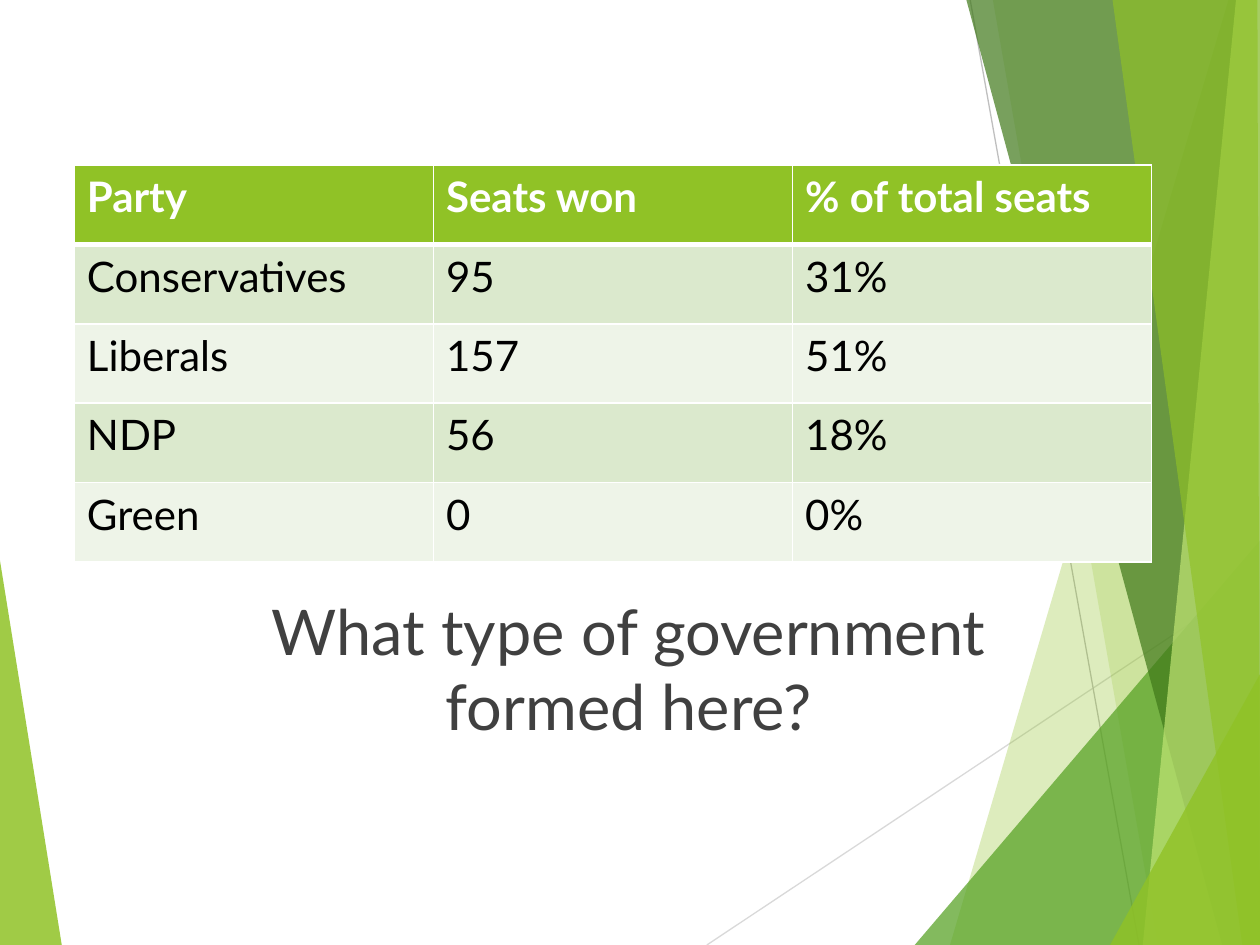
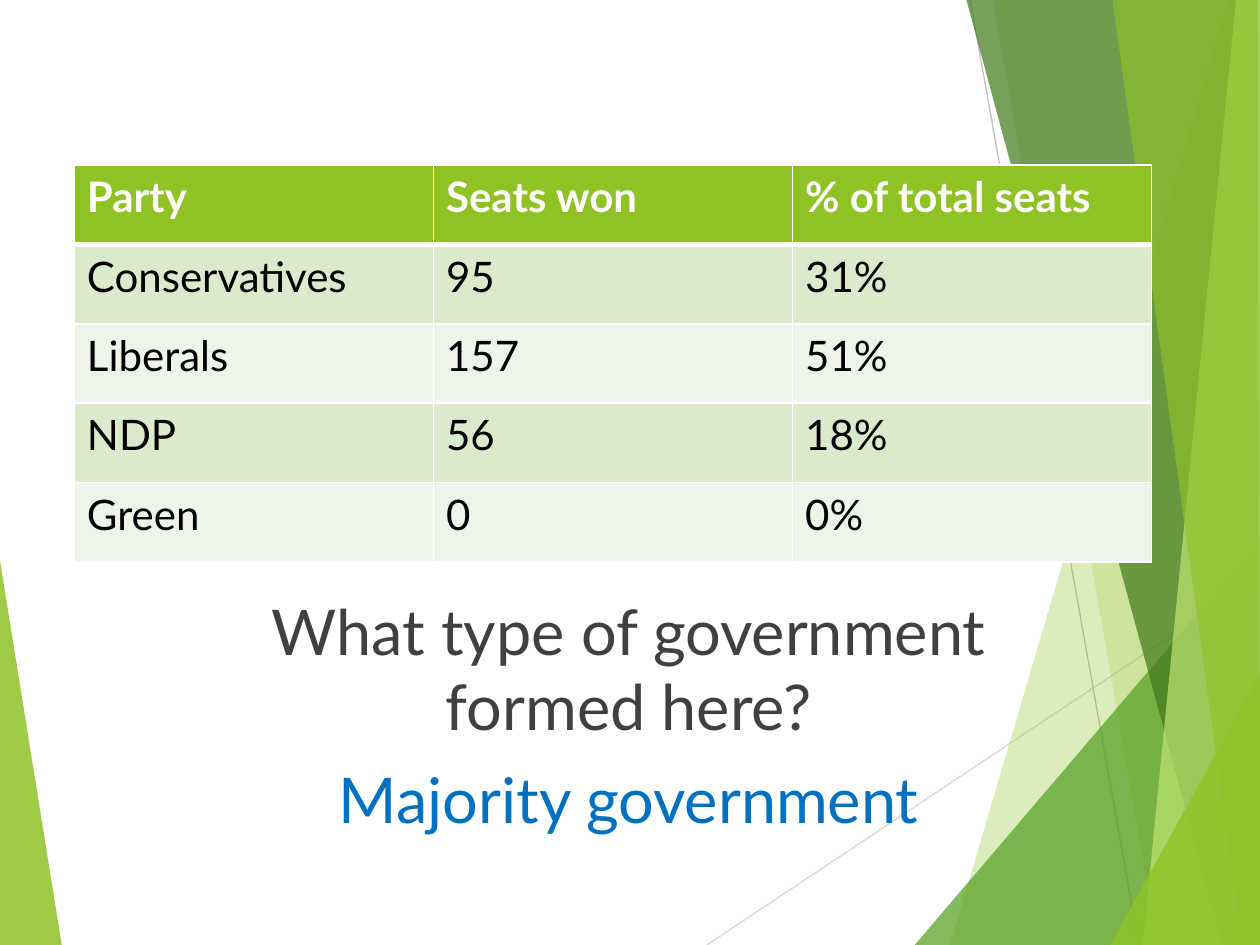
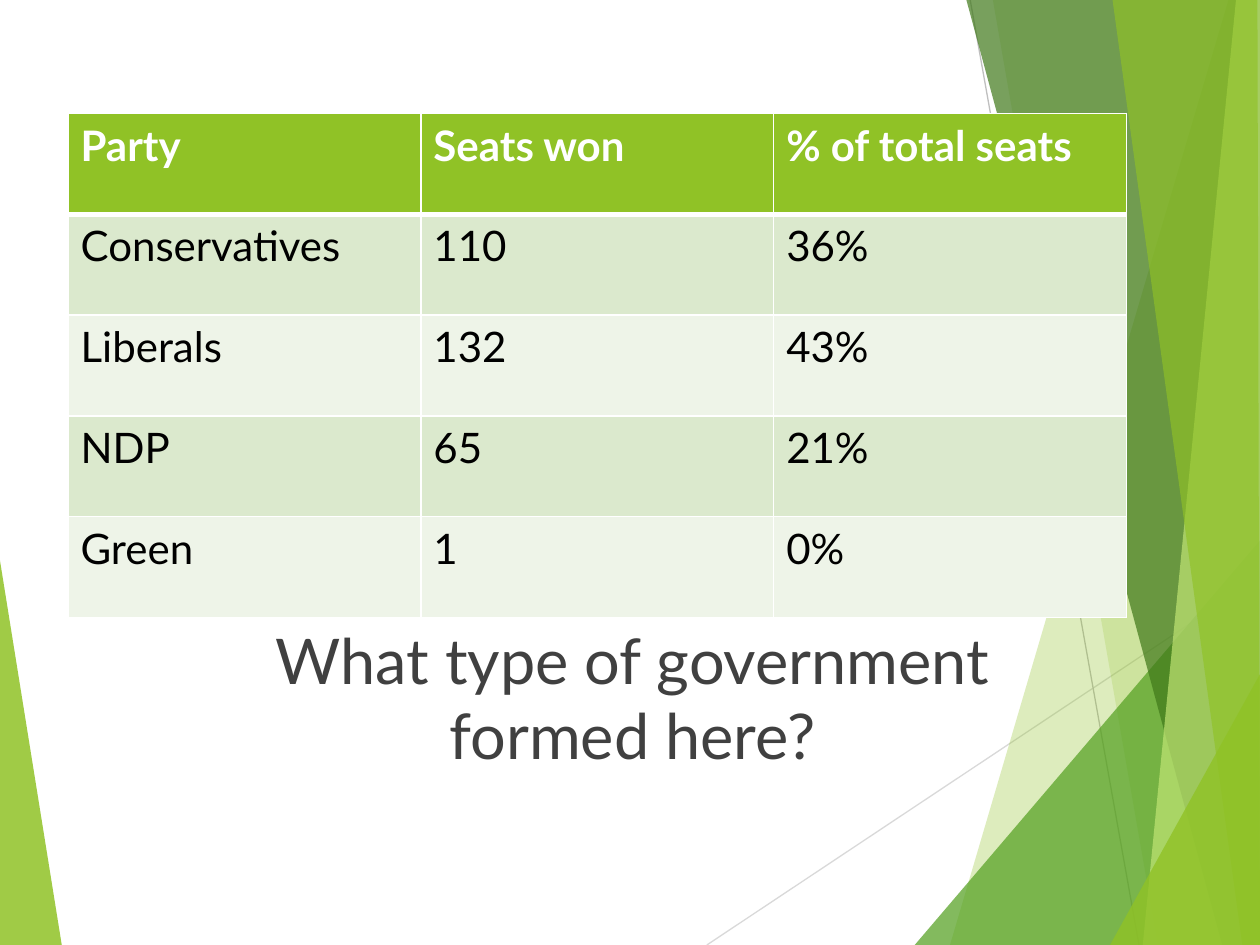
from dataclasses import dataclass
from typing import NamedTuple

from lxml import etree
from pptx import Presentation
from pptx.dml.color import RGBColor
from pptx.enum.shapes import MSO_CONNECTOR
from pptx.enum.text import MSO_ANCHOR, MSO_AUTO_SIZE, PP_ALIGN
from pptx.oxml.ns import qn
from pptx.util import Pt

STRAIGHT = MSO_CONNECTOR.STRAIGHT
CENTER = PP_ALIGN.CENTER
TOP = MSO_ANCHOR.TOP
FIXED = MSO_AUTO_SIZE.NONE

PX = 9144
WIDE, HIGH = 1000, 750


@dataclass(frozen=True)
class Theme:
    font: str = "Lato"
    lime: str = "90C226"
    leaf: str = "54A021"
    moss: str = "3F7819"
    pale: str = "C0E474"
    white: str = "FFFFFF"
    black: str = "000000"
    text: str = "404040"
    blue: str = "0070C0"
    silver: str = "D9D9D9"
    gray: str = "BFBFBF"
    bands: tuple[str, str] = ("DBE9CD", "EEF4E8")
    big: int = 36
    cell: int = 24
    gap: int = 10
    hair: float = 0.75
    thin: int = 1
    thick: int = 3


THEME = Theme()


class Box(NamedTuple):
    left: int
    top: int
    width: int
    height: int

    def scaled(self) -> list[int]:
        return [side * PX for side in self]


class Facet(NamedTuple):
    color: str
    alpha: int
    points: list[tuple[int, int]]


class Ray(NamedTuple):
    color: str
    ends: tuple[int, int, int, int]


class Vote(NamedTuple):
    grid: Box
    note: Box
    seats: list[int]
    shares: list[int]
    answer: str = ""


HEADS = ("Party", "Seats won", "% of total seats")
PARTIES = ("Conservatives", "Liberals", "NDP", "Green")
QUERY = "What type of government formed here?"

DECOR = [
    Facet(THEME.lime, 85, [(0, 445), (49, HIGH), (0, HIGH)]),
    Ray(THEME.silver, (561, HIGH, WIDE, 458)),
    Ray(THEME.gray, (770, 0, 904, HIGH)),
    Facet(THEME.lime, 30, [(975, 0), (754, HIGH), (WIDE, HIGH), (WIDE, 0)]),
    Facet(THEME.lime, 20, [(788, 0), (919, HIGH), (WIDE, HIGH), (WIDE, 0)]),
    Facet(THEME.leaf, 72, [(726, HIGH), (WIDE, 429), (WIDE, HIGH)]),
    Facet(THEME.moss, 70, [(767, 0), (970, HIGH), (WIDE, HIGH), (WIDE, 0)]),
    Facet(THEME.pale, 70, [(981, 0), (907, HIGH), (WIDE, HIGH), (WIDE, 0)]),
    Facet(THEME.lime, 65, [(883, 0), (986, HIGH), (WIDE, HIGH), (998, 0)]),
    Facet(THEME.lime, 80, [(881, HIGH), (WIDE, 535), (WIDE, HIGH)]),
]

FIRST = Vote(Box(59, 131, 855, 315), Box(160, 465, 678, 243),
             [95, 157, 56, 0], [31, 51, 18, 0])
VOTES = [
    FIRST,
    FIRST._replace(answer="Majority government"),
    Vote(Box(54, 90, 840, 400), Box(163, 488, 678, 212),
         [110, 132, 65, 1], [36, 43, 21, 0]),
]


def paint(fill, color: str) -> None:
    fill.solid()
    fill.fore_color.rgb = RGBColor.from_string(color)


def style(font, color: str, size: int, bold: bool = False) -> None:
    font.name = THEME.font
    font.size = Pt(size)
    font.bold = bold
    font.color.rgb = RGBColor.from_string(color)


def draw_facet(slide, facet: Facet):
    start, *rest = facet.points
    pen = slide.shapes.build_freeform(*start, scale=PX)
    pen.add_line_segments(rest, close=True)
    shape = pen.convert_to_shape()
    shape.shadow.inherit = False
    shape.line.fill.background()
    paint(shape.fill, facet.color)
    tint = next(shape.element.iter(qn("a:srgbClr")))
    etree.SubElement(tint, qn("a:alpha"), val=str(facet.alpha * 1000))
    return shape


def draw_ray(slide, ray: Ray):
    line = slide.shapes.add_connector(STRAIGHT, *(end * PX for end in ray.ends))
    line.line.width = Pt(THEME.hair)
    paint(line.line.fill, ray.color)
    etree.SubElement(line.element.spPr, qn("a:effectLst"))
    return line


def drop(shape) -> None:
    shape.element.getparent().remove(shape.element)


def share_decor(slide, layout) -> None:
    for spare in list(layout.placeholders)[2:]:
        drop(spare)
    for item in DECOR:
        draw = draw_facet if isinstance(item, Facet) else draw_ray
        layout.shapes.element.append(draw(slide, item).element)


def edge_cell(cell, row: int) -> None:
    props = cell._tc.get_or_add_tcPr()
    heavy = {0: "lnB", 1: "lnT"}.get(row)
    for side in ("lnL", "lnR", "lnT", "lnB"):
        width = THEME.thick if side == heavy else THEME.thin
        edge = etree.SubElement(props, qn(f"a:{side}"), w=str(Pt(width)))
        fill = etree.SubElement(edge, qn("a:solidFill"))
        etree.SubElement(fill, qn("a:srgbClr"), val=THEME.white)


def draw_grid(slide, vote: Vote) -> None:
    shares = [f"{share}%" for share in vote.shares]
    rows = [HEADS, *zip(PARTIES, map(str, vote.seats), shares)]
    frame = slide.shapes.add_table(len(rows), len(HEADS), *vote.grid.scaled())
    for r, row in enumerate(rows):
        head = r == 0
        for c, text in enumerate(row):
            cell = frame.table.cell(r, c)
            edge_cell(cell, r)
            paint(cell.fill, THEME.lime if head else THEME.bands[(r - 1) % 2])
            cell.text = text
            color = THEME.white if head else THEME.black
            style(cell.text_frame.paragraphs[0].font, color, THEME.cell, head)


def fill_note(note, vote: Vote) -> None:
    note.left, note.top, note.width, note.height = vote.note.scaled()
    frame = note.text_frame
    frame.word_wrap = True
    frame.auto_size = FIXED
    frame.vertical_anchor = TOP
    lines = [(QUERY, THEME.text)]
    if vote.answer:
        lines.append((vote.answer, THEME.blue))
    for i, (text, color) in enumerate(lines):
        para = frame.add_paragraph() if i else frame.paragraphs[0]
        para.text = text
        para.alignment = CENTER
        para.space_before = Pt(THEME.gap if i else 0)
        props = para._p.get_or_add_pPr()
        props.set("marL", "0")
        props.set("indent", "0")
        etree.SubElement(props, qn("a:buNone"))
        style(para.font, color, THEME.big)


def main() -> None:
    deck = Presentation()
    deck.slide_width, deck.slide_height = WIDE * PX, HIGH * PX
    layout = deck.slide_layouts[1]
    for i, vote in enumerate(VOTES):
        slide = deck.slides.add_slide(layout)
        if i == 0:
            share_decor(slide, layout)
        drop(slide.shapes.title)
        fill_note(slide.placeholders[1], vote)
        draw_grid(slide, vote)
    deck.save("out.pptx")


if __name__ == "__main__":
    main()
